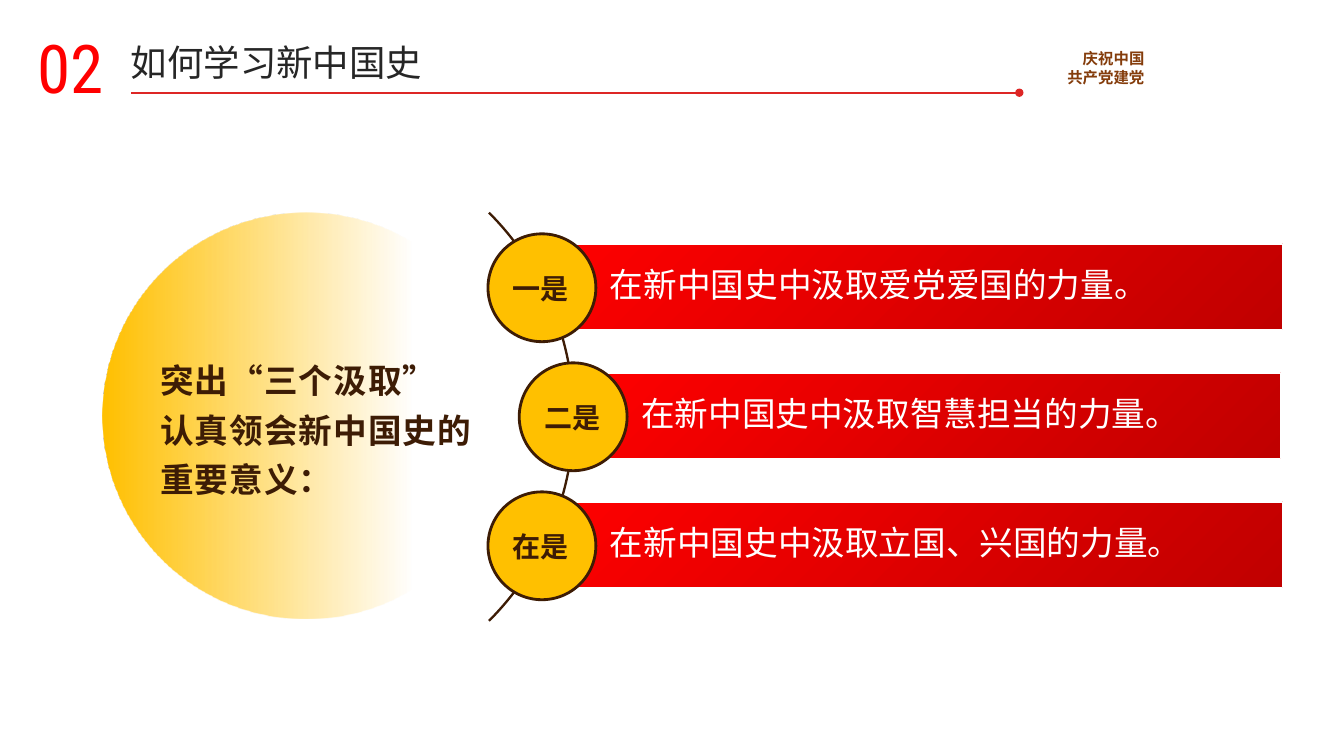
from dataclasses import dataclass, field

from lxml.etree import SubElement
from pptx import Presentation
from pptx.dml.color import RGBColor
from pptx.enum.shapes import MSO_CONNECTOR as Connector, MSO_SHAPE as Preset
from pptx.enum.text import MSO_ANCHOR as Anchor, MSO_AUTO_SIZE as AutoSize, PP_ALIGN as Align
from pptx.oxml.ns import qn
from pptx.shapes.autoshape import Shape
from pptx.slide import Slide
from pptx.text.text import TextFrame
from pptx.util import Inches, Pt


@dataclass(frozen=True)
class Theme:
    red: str = "FF0000"
    dark_red: str = "C00000"
    rule: str = "DD2625"
    gold: str = "FFC000"
    brown: str = "3D1C05"
    motto: str = "843C0B"
    ink: str = "262626"
    white: str = "FFFFFF"
    chinese_font: str = "Noto Sans CJK SC"
    number_font: str = "Roboto Condensed"
    number_size: int = 48
    title_size: int = 26
    body_size: int = 24
    badge_size: int = 20
    motto_size: int = 11


THEME = Theme()


@dataclass(frozen=True)
class Area:
    left: float
    top: float
    width: float
    height: float

    def lengths(self) -> tuple:
        return tuple(Inches(n) for n in (self.left, self.top, self.width, self.height))


@dataclass(frozen=True)
class TextStyle:
    size: int
    color: str
    bold: bool = False
    font: str = THEME.chinese_font
    spacing: float = 0
    indent: float = 0
    paragraph: dict = field(default_factory=dict)


@dataclass(frozen=True)
class Lesson:
    badge: str
    wording: str
    shift: float
    bar_width: float


@dataclass(frozen=True)
class Label:
    area: Area
    lines: tuple
    style: TextStyle


CENTERED = {"alignment": Align.CENTER}
LABELS = (
    Label(Area(9.87, 0.44, 1.58, 0.47), ("庆祝中国", "共产党建党"),
          TextStyle(THEME.motto_size, THEME.motto, True, paragraph={"alignment": Align.RIGHT})),
    Label(Area(0.16, 0.21, 1.08, 0.91), ("02",),
          TextStyle(THEME.number_size, THEME.red, font=THEME.number_font, paragraph=CENTERED)),
    Label(Area(1.2, 0.35, 7.67, 0.54), ("如何学习新中国史",),
          TextStyle(THEME.title_size, THEME.ink)),
)
THESIS = Label(
    Area(1.39, 3.44, 3.55, 1.54), ("突出“三个汲取”", "认真领会新中国史的重要意义："),
    TextStyle(THEME.body_size, THEME.brown, True, spacing=0.8, indent=0.1,
              paragraph={"line_spacing": Pt(35)}))
BAR_STYLE = TextStyle(THEME.body_size, THEME.white,
                      paragraph={"alignment": Align.LEFT, "line_spacing": 0.9})
BADGE_STYLE = TextStyle(THEME.badge_size, THEME.brown, True, paragraph=CENTERED)
LESSONS = (
    Lesson("一是", "在新中国史中汲取爱党爱国的力量。", 0, 7.35),
    Lesson("二是", "在新中国史中汲取智慧担当的力量。", 0.31, 7.02),
    Lesson("在是", "在新中国史中汲取立国、兴国的力量。", 0, 7.35),
)
ROW_STEP = 1.28


def set_values(target: object, values: dict) -> None:
    for name, value in values.items():
        setattr(target, name, value)


def write(frame: TextFrame, lines: tuple, style: TextStyle) -> None:
    for index, line in enumerate(lines):
        para = frame.add_paragraph() if index else frame.paragraphs[0]
        set_values(para, style.paragraph)
        if style.indent:
            para._p.get_or_add_pPr().set("marL", str(Inches(style.indent)))
        span = para.add_run()
        span.text = line
        set_values(span.font, {"size": Pt(style.size), "bold": style.bold, "name": style.font})
        span.font.color.rgb = RGBColor.from_string(style.color)
        properties = span._r.get_or_add_rPr()
        SubElement(properties, qn("a:ea")).set("typeface", style.font)
        if style.spacing:
            properties.set("spc", str(round(style.spacing * 100)))


def add_label(page: Slide, label: Label) -> None:
    box = page.shapes.add_textbox(*label.area.lengths())
    set_values(box.text_frame, {"word_wrap": True, "auto_size": AutoSize.SHAPE_TO_FIT_TEXT})
    write(box.text_frame, label.lines, label.style)


def add_figure(page: Slide, preset: Preset, area: Area, fill: str = "",
               line: str = "", line_width: float = 0) -> Shape:
    figure = page.shapes.add_shape(preset, *area.lengths())
    figure.shadow.inherit = False
    if fill:
        figure.fill.solid()
        figure.fill.fore_color.rgb = RGBColor.from_string(fill)
    if line:
        figure.line.color.rgb = RGBColor.from_string(line)
        figure.line.width = Pt(line_width)
    else:
        figure.line.fill.background()
    return figure


def fill_gradient(figure: Shape, colors: tuple, end: float, angle: float) -> None:
    """Blend two colours up to the end position; the angle runs counter-clockwise."""
    figure.fill.gradient()
    figure.fill.gradient_angle = angle
    for stop, color, position in zip(figure.fill.gradient_stops, colors, (0, end)):
        stop.color.rgb = RGBColor.from_string(color)
        stop.position = position


def add_heading_rule(page: Slide) -> None:
    y = Inches(0.92)
    rule = page.shapes.add_connector(Connector.STRAIGHT, Inches(1.3), y, Inches(10.11), y)
    rule.line.color.rgb = RGBColor.from_string(THEME.rule)
    rule.line.width = Pt(1.5)
    SubElement(rule.line._get_or_add_ln(), qn("a:tailEnd")).set("type", "oval")
    SubElement(rule._element.spPr, qn("a:effectLst"))


def add_fading_disc(page: Slide) -> None:
    disc = add_figure(page, Preset.OVAL, Area(1.02, 2.11, 4.03, 4.03))
    fill_gradient(disc, (THEME.gold, THEME.gold), 0.76, 0)
    last_color = disc._element.spPr.findall(".//" + qn("a:srgbClr"))[-1]
    SubElement(last_color, qn("a:alpha")).set("val", "0")


def add_arc(page: Slide) -> None:
    arc = add_figure(page, Preset.BLOCK_ARC, Area(-0.05, 1.26, 5.75, 5.75), THEME.brown)
    for index, value in enumerate((189, 27, 0.004)):
        arc.adjustments[index] = value


def add_lesson(page: Slide, lesson: Lesson, row: int) -> None:
    drop = row * ROW_STEP
    bar = add_figure(page, Preset.RECTANGLE,
                     Area(5.37 + lesson.shift, 2.42 + drop, lesson.bar_width, 0.85),
                     line=THEME.white, line_width=1)
    fill_gradient(bar, (THEME.red, THEME.dark_red), 1, 315)
    margin = Inches(0.07)
    set_values(bar.text_frame, {
        "word_wrap": True, "vertical_anchor": Anchor.MIDDLE, "margin_left": Inches(0.68),
        "margin_top": margin, "margin_right": margin, "margin_bottom": margin})
    write(bar.text_frame, (lesson.wording,), BAR_STYLE)
    add_figure(page, Preset.OVAL, Area(4.84 + lesson.shift, 2.32 + drop, 1.07, 1.07),
               THEME.gold, THEME.brown, 2)
    add_label(page, Label(Area(4.94 + lesson.shift, 2.64 + drop, 0.85, 0.44),
                          (lesson.badge,), BADGE_STYLE))


def main() -> None:
    deck = Presentation()
    set_values(deck, {"slide_width": Inches(13.33), "slide_height": Inches(7.5)})
    page = deck.slides.add_slide(deck.slide_layouts[6])
    add_heading_rule(page)
    for label in LABELS:
        add_label(page, label)
    add_fading_disc(page)
    add_label(page, THESIS)
    add_arc(page)
    for row, lesson in enumerate(LESSONS):
        add_lesson(page, lesson, row)
    deck.save("out.pptx")


if __name__ == "__main__":
    main()
